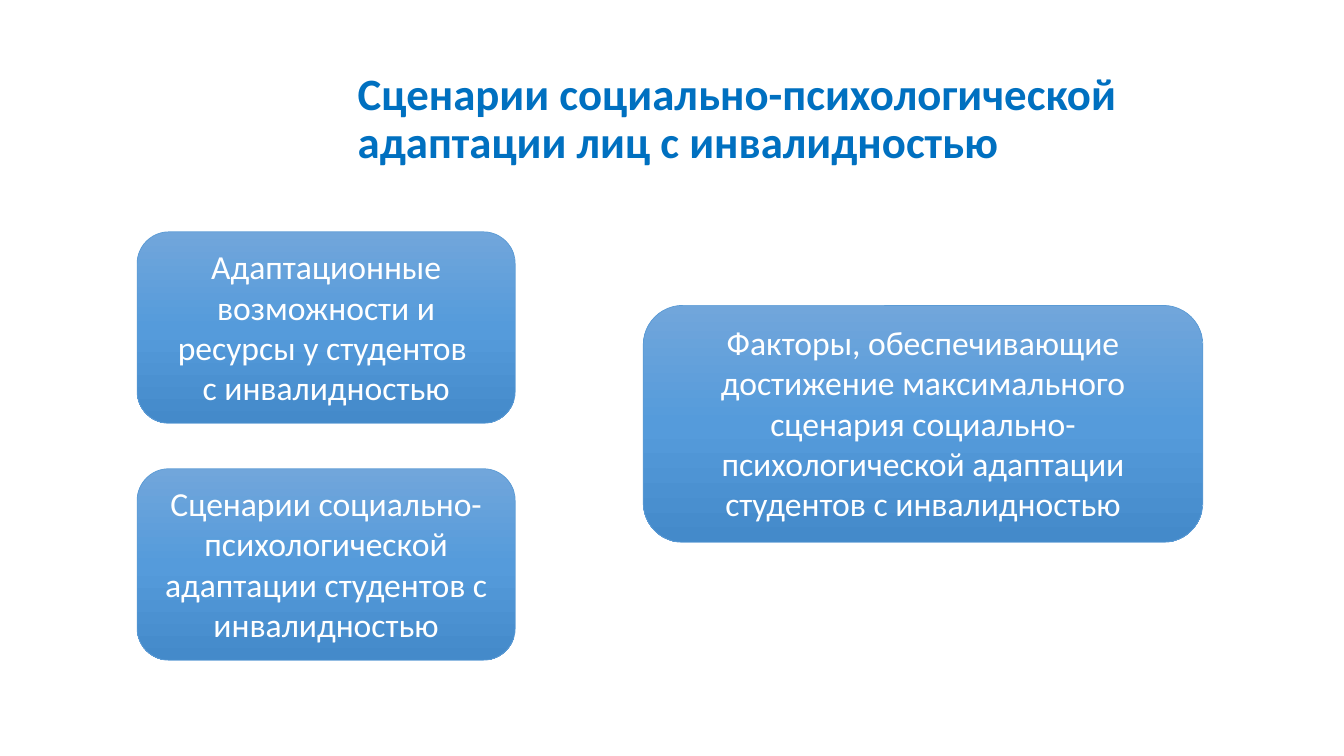
"""Builds a slide on scenarios of adaptation for people with disabilities."""
from copy import deepcopy

from pptx import Presentation
from pptx.dml.color import RGBColor
from pptx.enum.shapes import MSO_SHAPE
from pptx.enum.text import MSO_ANCHOR, MSO_AUTO_SIZE, PP_ALIGN
from pptx.oxml.ns import qn
from pptx.util import Inches, Pt

ROUNDED = MSO_SHAPE.ROUNDED_RECTANGLE
TOP, MIDDLE = MSO_ANCHOR.TOP, MSO_ANCHOR.MIDDLE
GROW = MSO_AUTO_SIZE.SHAPE_TO_FIT_TEXT
LEFT, CENTER = PP_ALIGN.LEFT, PP_ALIGN.CENTER
FONT = "Calibri"
COLORS = {
    "title": "0070C0",
    "text": "FFFFFF",
    "line": "5B9BD5",
    "light": "71A6DB",
    "mid": "559BDB",
    "dark": "448ACA",
}


def rgb(name):
    return RGBColor.from_string(COLORS[name])


def write(tf, text, size, color, align, bold=False):
    tf.word_wrap = True
    tf.text = text
    for p in tf.paragraphs:
        p.alignment = align
        for r in p.runs:
            r.font.name = FONT
            r.font.size = Pt(size)
            r.font.bold = bold
            r.font.color.rgb = rgb(color)


prs = Presentation()
prs.slide_width, prs.slide_height = Inches(13.33), Inches(7.5)
s = prs.slides.add_slide(prs.slide_layouts[6])

title = s.shapes.add_textbox(Inches(3.45), Inches(0.7), Inches(8.97), Inches(0.98))
tf = title.text_frame
write(tf, "Сценарии социально-психологической адаптации лиц с инвалидностью",
      32, "title", LEFT, bold=True)
tf.vertical_anchor = MIDDLE
tf.paragraphs[0].line_spacing = 0.9

cards = [
    (1.36, 2.3, 3.75, 1.9,
     "Адаптационные возможности и ресурсы у студентов \nс инвалидностью"),
    (1.36, 4.65, 3.75, 1.9,
     "Сценарии социально-психологической адаптации студентов с инвалидностью"),
    (6.38, 3.03, 5.55, 2.35,
     "Факторы, обеспечивающие достижение максимального сценария "
     "социально-психологической адаптации студентов с инвалидностью"),
]
for x, y, w, h, text in cards:
    sp = s.shapes.add_shape(ROUNDED, Inches(x), Inches(y), Inches(w), Inches(h))
    sp.shadow.inherit = False
    sp.fill.gradient()
    sp.fill.gradient_angle = 270
    stop_list = sp._element.spPr.find(".//" + qn("a:gsLst"))
    stop_list.append(deepcopy(stop_list[-1]))
    for i, (stop, color) in enumerate(zip(sp.fill.gradient_stops, ("light", "mid", "dark"))):
        stop.position = i / 2
        stop.color.rgb = rgb(color)
    sp.line.color.rgb = rgb("line")
    sp.line.width = Pt(0.5)
    tf = sp.text_frame
    write(tf, text, 24, "text", CENTER)
    tf.vertical_anchor = TOP
    tf.auto_size = GROW

prs.save("out.pptx")
